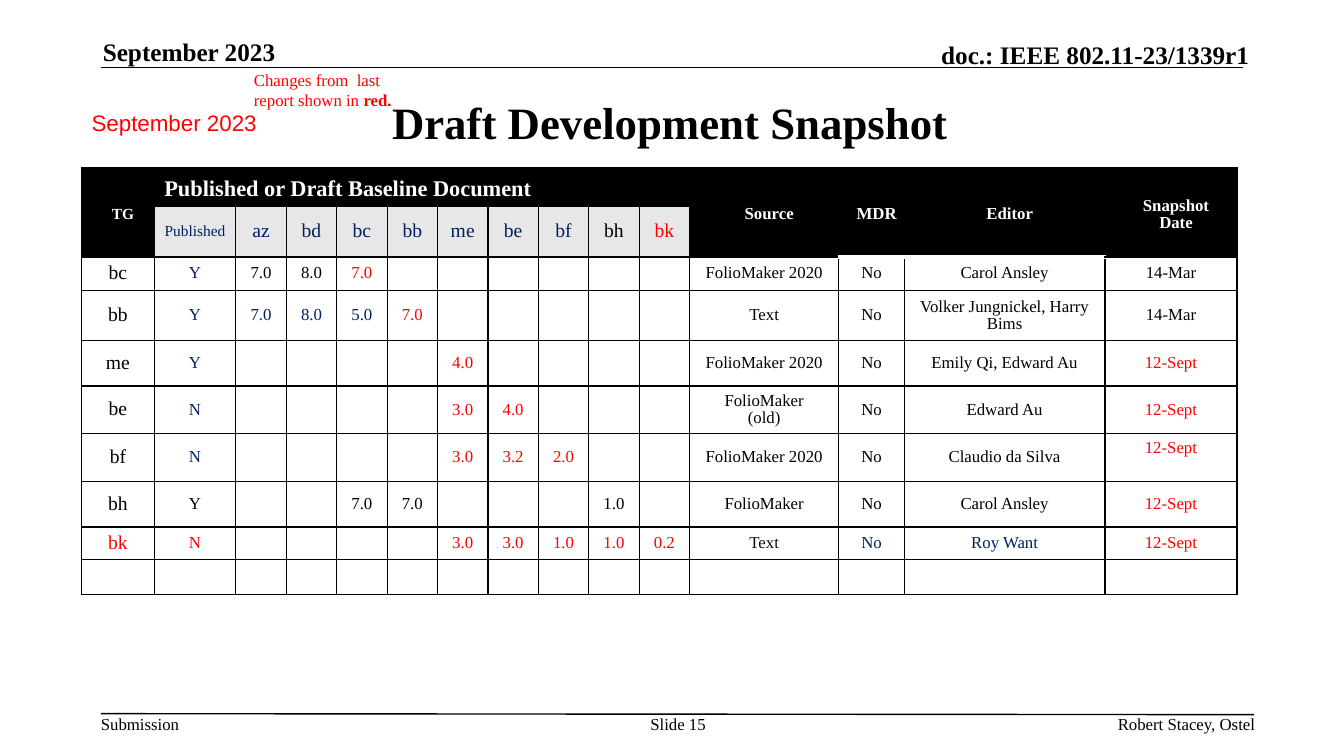
from lxml.etree import SubElement
from pptx import Presentation
from pptx.dml.color import RGBColor
from pptx.enum.shapes import MSO_CONNECTOR
from pptx.enum.text import MSO_ANCHOR, PP_ALIGN
from pptx.oxml.ns import qn
from pptx.util import Inches, Pt

COLORS = {"black": "000000", "white": "FFFFFF", "red": "FF0000",
          "navy": "002060", "ink": "0D0D0D", "grey": "E7E7E7"}
SERIF = "Times New Roman"
ALIGN = {"left": PP_ALIGN.LEFT, "center": PP_ALIGN.CENTER, "right": PP_ALIGN.RIGHT}
ANCHOR = {"top": MSO_ANCHOR.TOP, "middle": MSO_ANCHOR.MIDDLE, "bottom": MSO_ANCHOR.BOTTOM}
SLIDE_COLUMNS, SLIDE_ROWS = 133.3, 75

DRAFTS = ["az", "bd", "bc", "bb", "me", "be", "bf", "bh", "bk"]
DRAFT_COLORS = {"bh": "black", "bk": "red"}
COLUMN_WIDTHS = [7.2, 8.1] + [5] * len(DRAFTS) + [14.8, 6.5, 19.9, 13.1]
ROW_HEIGHTS = [3.9, 5, 3.3, 5, 4.5, 4.7, 4.7, 4.5, 3.2, 3.5]
SOURCE, MDR, EDITOR, DATE = range(len(DRAFTS) + 2, len(DRAFTS) + 6)
FOLIO = "FolioMaker"

GROUPS = [
    ("bc", "Y|navy", {"az": "7.0", "bd": "8.0", "bc": "7.0|red"},
     f"{FOLIO} 2020", "No", "Carol Ansley", "14-Mar"),
    ("bb", "Y|navy", {"az": "7.0|navy", "bd": "8.0|navy", "bc": "5.0|navy", "bb": "7.0|red"},
     "Text", "No", "Volker Jungnickel, Harry Bims", "14-Mar"),
    ("me", "Y|navy", {"me": "4.0|red"},
     f"{FOLIO} 2020", "No", "Emily Qi, Edward Au", "12-Sept|red"),
    ("be", "N|navy", {"me": "3.0|red", "be": "4.0|red"},
     f"{FOLIO}\n(old)", "No", "Edward Au", "12-Sept|red"),
    ("bf", "N|navy", {"me": "3.0|red", "be": "3.2|red", "bf": "2.0|red"},
     f"{FOLIO} 2020", "No", "Claudio da Silva", "12-Sept|red"),
    ("bh", "Y", {"bc": "7.0", "bb": "7.0", "bh": "1.0"},
     FOLIO, "No", "Carol Ansley", "12-Sept|red"),
    ("bk|red", "N|red", {"me": "3.0|red", "be": "3.0|red", "bf": "1.0|red",
                         "bh": "1.0|red", "bk": "0.2|red"},
     "Text|ink", "No|navy", "Roy Want|navy", "12-Sept|red"),
    ("", "", {}, "", "", "", ""),
]


def grid(cells):
    return Inches(cells / 10)


def rgb(name):
    return RGBColor.from_string(COLORS[name])


class SnapshotPage:
    def __init__(self, deck):
        self.page = deck.slides.add_slide(deck.slide_layouts[6])

    def span(self, para, text, size, color="black", bold=False, font=SERIF):
        span = para.add_run()
        span.text = text
        span.font.name, span.font.size, span.font.bold = font, Pt(size), bold
        span.font.color.rgb = rgb(color)

    def text(self, place, spans, align="left", anchor="top", margins=(0, 0), wrap=True):
        box = self.page.shapes.add_textbox(*map(grid, place))
        frame = box.text_frame
        frame.word_wrap = wrap
        frame.vertical_anchor = ANCHOR[anchor]
        frame.margin_left = frame.margin_right = grid(margins[0])
        frame.margin_top = frame.margin_bottom = grid(margins[1])
        para = frame.paragraphs[0]
        para.alignment = ALIGN[align]
        for text, style in spans:
            self.span(para, text, **style)

    def line(self, *ends):
        rule = self.page.shapes.add_connector(MSO_CONNECTOR.STRAIGHT, *map(grid, ends))
        rule.line.color.rgb = rgb("black")
        rule.line.width = Pt(1)
        SubElement(rule._element.spPr, qn("a:effectLst"))

    def table(self, left, top, widths, heights):
        frame = self.page.shapes.add_table(len(heights), len(widths), grid(left), grid(top),
                                           grid(sum(widths)), grid(sum(heights)))
        table = frame.table
        table.first_row = table.horz_banding = False
        for column, width in zip(table.columns, widths):
            column.width = grid(width)
        for row, height in zip(table.rows, heights):
            row.height = grid(height)
        return table

    def border(self, cell, **sides):
        props = cell._tc.get_or_add_tcPr()
        for index, side in enumerate("LRTB"):
            color, width = sides.get(side, ("black", 1))
            edge = props.makeelement(qn(f"a:ln{side}"), {"w": str(Pt(width))})
            fill = SubElement(edge, qn("a:solidFill"))
            SubElement(fill, qn("a:srgbClr"), val=COLORS[color])
            props.insert(index, edge)

    def cell(self, cell, entry, size=12, fill=None, bold=False, align="center", header=False):
        text, _, color = entry.partition("|")
        cell.vertical_anchor = MSO_ANCHOR.MIDDLE
        if header:
            cell.margin_right = cell.margin_bottom = 0
        if fill:
            cell.fill.solid()
            cell.fill.fore_color.rgb = rgb(fill)
        else:
            cell.fill.background()
        for index, words in enumerate(text.split("\n")):
            para = cell.text_frame.paragraphs[0] if index == 0 else cell.text_frame.add_paragraph()
            para.alignment = ALIGN[align]
            para.line_spacing = 0.93
            if words:
                self.span(para, words, size, color or "black", bold)
            else:
                SubElement(para._p, qn("a:endParaRPr"), sz=str(size * 100))

    def header(self, table):
        titles = {0: "TG", 1: "Published or Draft Baseline Document", SOURCE: "Source",
                  MDR: "MDR", EDITOR: "Editor", DATE: "Snapshot\nDate"}
        sizes = {0: 11, 1: 16}
        for column in range(len(COLUMN_WIDTHS)):
            title = titles.get(column, "")
            self.cell(table.cell(0, column), f"{title}|white", sizes.get(column, 12), "black",
                      True, "left" if column == 1 else "center", True)
            if column in titles and column != 1:
                self.cell(table.cell(1, column), "", fill="black")
                table.cell(0, column).merge(table.cell(1, column))
        table.cell(0, 1).merge(table.cell(0, SOURCE - 1))
        self.cell(table.cell(1, 1), "Published|navy", 11, "grey")
        for column, draft in enumerate(DRAFTS, 2):
            color = DRAFT_COLORS.get(draft, "navy")
            self.cell(table.cell(1, column), f"{draft}|{color}", 14, "grey")

    def snapshot(self):
        table = self.table(8.1, 16.6, COLUMN_WIDTHS, ROW_HEIGHTS)
        self.header(table)
        for row, (group, published, versions, *details) in enumerate(GROUPS, 2):
            entries = [group, published] + [versions.get(draft, "") for draft in DRAFTS] + details
            for column, entry in enumerate(entries):
                self.cell(table.cell(row, column), entry, 12 if column or not entry else 14)
            if group == "bf":
                table.cell(row, DATE).margin_bottom = grid(2.4)
        for row in range(len(ROW_HEIGHTS)):
            for column in range(len(COLUMN_WIDTHS)):
                sides = {}
                if column in (MDR, EDITOR) and row < 2:
                    sides = {"B": ("white", 3)}
                elif column in (MDR, EDITOR) and row == 2:
                    sides = {"T": ("white", 1)}
                self.border(table.cell(row, column), **sides)


def main():
    deck = Presentation()
    deck.slide_width, deck.slide_height = grid(SLIDE_COLUMNS), grid(SLIDE_ROWS)
    page = SnapshotPage(deck)
    heading = {"size": 18, "bold": True}
    footer = {"size": 12}
    note = {"size": 12, "color": "red"}
    page.line(10, 6.7, 123.3, 6.7)
    page.line(10, 70.8, 124.4, 70.9)
    page.text((10, 70.8, 7.9, 2), [("Submission", footer)], wrap=False)
    page.text((72.9, 3.9, 51, 3), [("doc.: IEEE 802.11-23/1339r1", heading)], "right", "bottom")
    page.text((9.8, 6.3, 113.3, 11.6),
              [("Draft Development Snapshot", {"size": 32, "bold": True})],
              "center", "middle", (1, 0.5))
    page.snapshot()
    page.text((63.4, 70.8, 7.7, 4), [("Slide 15", footer)], "center")
    page.text((78.1, 70.8, 46.4, 2), [("Robert Stacey, Ostel", footer)], "right")
    page.text((10.2, 3.6, 27.3, 3), [("September 2023", heading)], anchor="bottom")
    page.text((8.1, 10.3, 18.6, 3.7),
              [("September 2023", {"size": 16, "color": "red", "font": "Arial"})],
              margins=(1, 0.5))
    page.text((24.2, 6.4, 18.3, 5),
              [("Changes from  last report shown in ", note), ("red.", {**note, "bold": True})],
              margins=(1, 0.5))
    deck.save("out.pptx")


if __name__ == "__main__":
    main()
